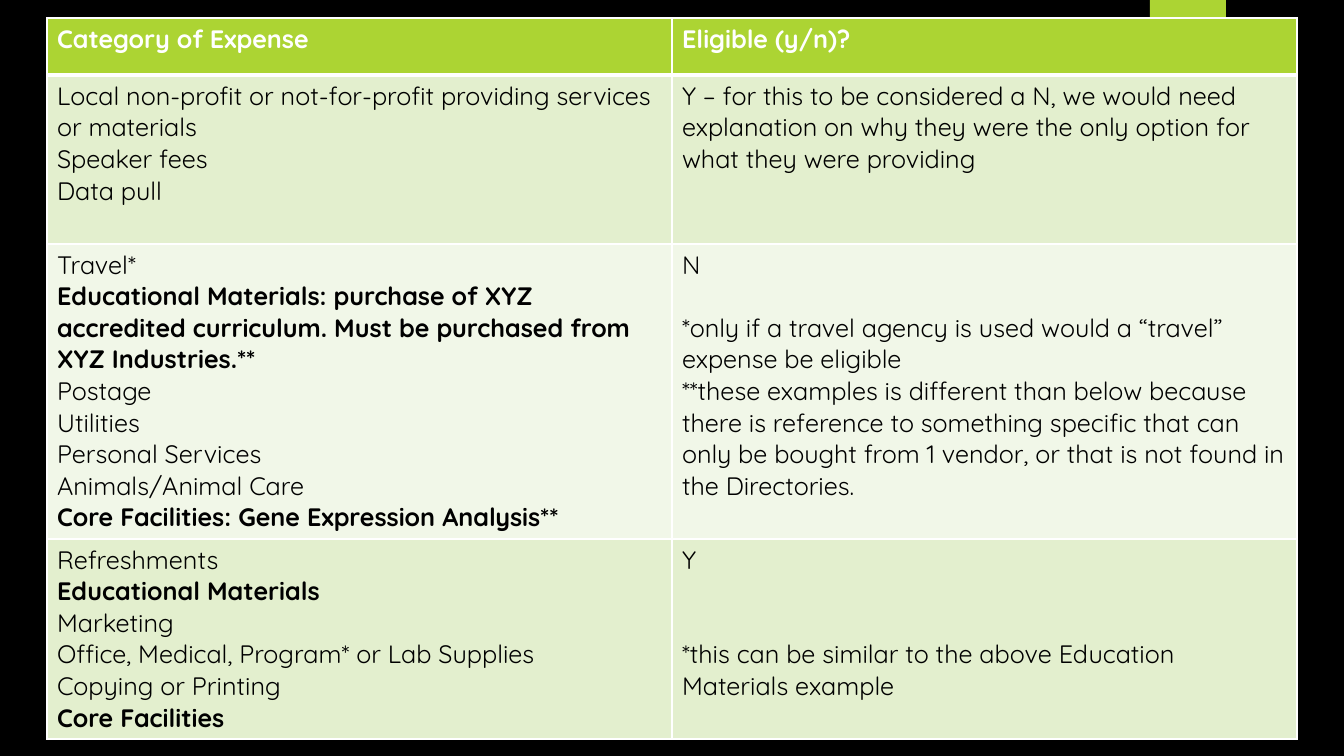
from lxml.etree import SubElement
from pptx import Presentation
from pptx.dml.color import RGBColor
from pptx.enum.shapes import MSO_SHAPE
from pptx.oxml.ns import qn
from pptx.util import Emu, Pt

COLORS = {
    "background": "000000",
    "accent": "ACD433",
    "band": "E3EFCE",
    "light": "F1F7E8",
    "white": "FFFFFF",
    "text": "000000",
}
FONT = "Quicksand"
FONT_SIZE = 18
LINE_HEIGHT = 22.5
SLIDE_WIDTH, SLIDE_HEIGHT = 1344, 756
SCALE = 12192000 / SLIDE_WIDTH

HEADINGS = (["Category of Expense"], ["Eligible (y/n)?"])
EXPENSE_ROWS = [
    (
        [
            "Local non-profit or not-for-profit providing services or materials",
            "Speaker fees",
            "Data pull",
        ],
        [
            "Y – for this to be considered a N, we would need explanation on why "
            "they were the only option for what they were providing",
        ],
    ),
    (
        [
            "Travel*",
            "Educational Materials: purchase of XYZ accredited curriculum. "
            "Must be purchased from XYZ Industries.**",
            "Postage",
            "Utilities",
            "Personal Services",
            "Animals/Animal Care",
            "Core Facilities: Gene Expression Analysis**",
        ],
        [
            "N",
            "*only if a travel agency is used would a “travel” expense be eligible",
            "**these examples is different than below because there is reference to "
            "something specific that can only be bought from 1 vendor, or that is "
            "not found in the Directories.",
        ],
    ),
    (
        [
            "Refreshments",
            "Educational Materials",
            "Marketing",
            "Office, Medical, Program* or Lab Supplies",
            "Copying or Printing",
            "Core Facilities",
        ],
        ["Y", "*this can be similar to the above Education Materials example"],
    ),
]
ROW_HEIGHTS = [57, 169, 295, 200]
ROW_FILLS = ["accent", "band", "light", "band"]
BOLD_STARTS = ("Educational Materials", "Core Facilities")
LINES_SKIPPED_BEFORE = {"*only": 1, "*this": 2}


def px(length):
    return Emu(round(length * SCALE))


def color(name):
    return RGBColor.from_string(COLORS[name])


class SlideBuilder:
    def __init__(self, presentation):
        self.slide = presentation.slides.add_slide(presentation.slide_layouts[6])
        fill = self.slide.background.fill
        fill.solid()
        fill.fore_color.rgb = color("background")

    def rectangle(self, left, top, width, height, fill):
        shape = self.slide.shapes.add_shape(
            MSO_SHAPE.RECTANGLE, px(left), px(top), px(width), px(height)
        )
        shape.shadow.inherit = False
        shape.fill.solid()
        shape.fill.fore_color.rgb = color(fill)
        shape.line.fill.background()

    def table(self, left, top, width, rows, heights, fills):
        columns = len(rows[0])
        table = self.slide.shapes.add_table(
            len(rows), columns, px(left), px(top), px(width), px(sum(heights))
        ).table
        for column in table.columns:
            column.width = px(width / columns)
        for row_index, row in enumerate(rows):
            table.rows[row_index].height = px(heights[row_index])
            for column_index, lines in enumerate(row):
                cell = table.cell(row_index, column_index)
                self.borders(cell, row_index)
                cell.fill.solid()
                cell.fill.fore_color.rgb = color(fills[row_index])
                self.cell_text(cell, lines, row_index == 0)

    def borders(self, cell, row_index):
        properties = cell._tc.get_or_add_tcPr()
        widths = {
            "lnL": 1,
            "lnR": 1,
            "lnT": 3 if row_index == 1 else 1,
            "lnB": 3 if row_index == 0 else 1,
        }
        for side, width in widths.items():
            line = SubElement(properties, qn(f"a:{side}"), w=str(Pt(width)))
            fill = SubElement(line, qn("a:solidFill"))
            SubElement(fill, qn("a:srgbClr"), val=COLORS["white"])

    def cell_text(self, cell, lines, is_header):
        cell.text_frame.text = "\n".join(lines)
        for paragraph in cell.text_frame.paragraphs:
            skipped = LINES_SKIPPED_BEFORE.get(paragraph.text.split()[0], 0)
            if skipped:
                paragraph.space_before = Pt(skipped * LINE_HEIGHT)
            for run in paragraph.runs:
                run.font.name = FONT
                run.font.size = Pt(FONT_SIZE)
                run.font.bold = is_header or run.text.startswith(BOLD_STARTS)
                run.font.color.rgb = color("white" if is_header else "text")


def main():
    presentation = Presentation()
    presentation.slide_width = px(SLIDE_WIDTH)
    presentation.slide_height = px(SLIDE_HEIGHT)
    builder = SlideBuilder(presentation)
    builder.rectangle(1150, 0, 76, 126, "accent")
    builder.table(47, 18, 1250, [HEADINGS, *EXPENSE_ROWS], ROW_HEIGHTS, ROW_FILLS)
    presentation.save("out.pptx")


if __name__ == "__main__":
    main()
